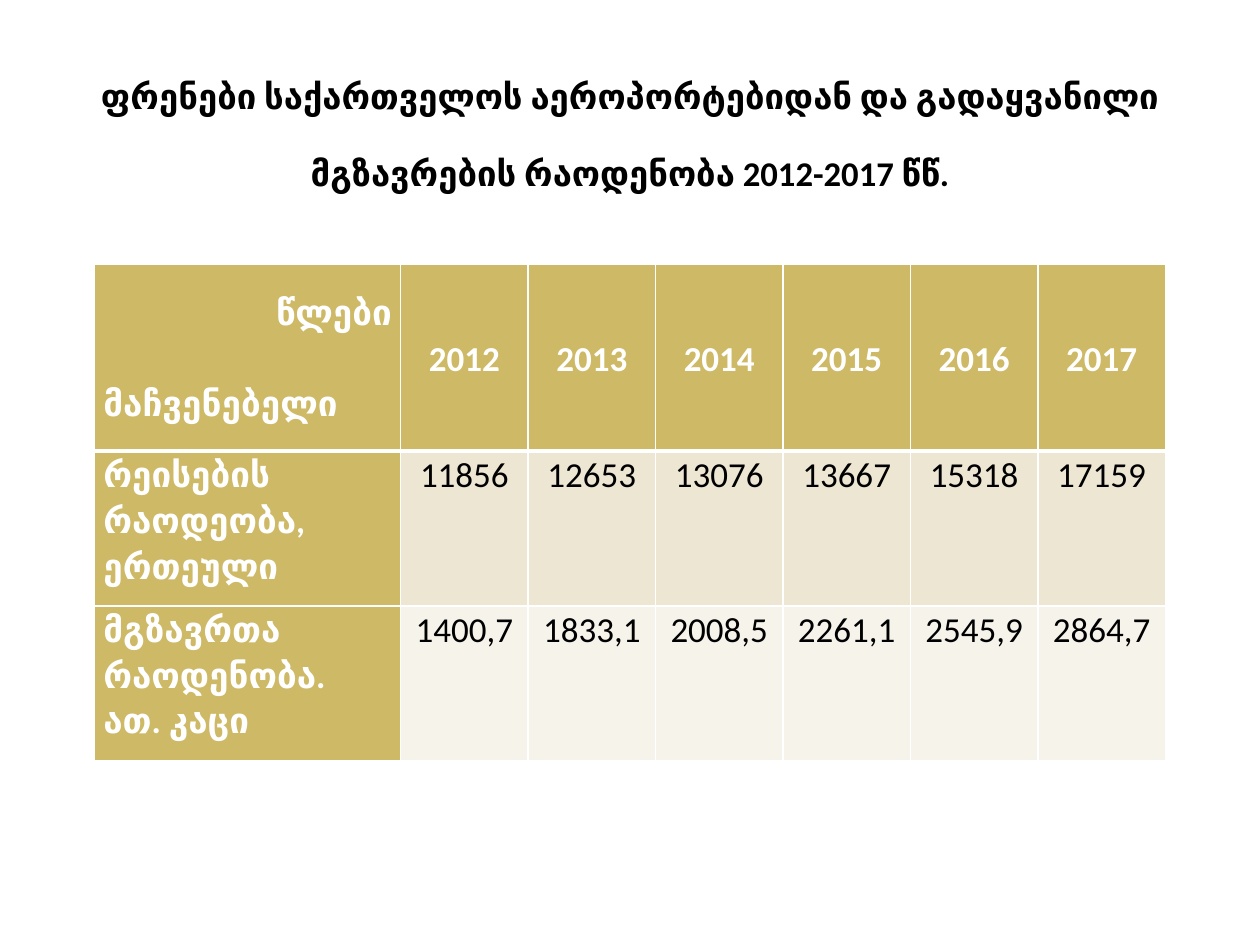
from lxml.etree import SubElement
from pptx import Presentation
from pptx.dml.color import RGBColor
from pptx.enum.text import MSO_ANCHOR as Anchor, PP_ALIGN as Align
from pptx.oxml import parse_xml
from pptx.oxml.ns import nsdecls, qn
from pptx.util import Pt

GOLD, SAND, CREAM = "CEB966", "EDE6D3", "F6F3EA"
WHITE, BLACK = "FFFFFF", "000000"

TITLE = ("ფრენები საქართველოს აეროპორტებიდან და გადაყვანილი "
         "მგზავრების რაოდენობა 2012-2017 წწ.")
YEARS = ["2012", "2013", "2014", "2015", "2016", "2017"]
ROWS = [
    ("რეისების რაოდეობა, ერთეული", SAND,
     ["11856", "12653", "13076", "13667", "15318", "17159"]),
    ("მგზავრთა რაოდენობა.\vათ. კაცი", CREAM,
     ["1400,7", "1833,1", "2008,5", "2261,1", "2545,9", "2864,7"]),
]


def rgb(value):
    return RGBColor.from_string(value)


class SlideBuilder:
    font = "Calibri"
    table_size = 20
    line_spacing = 1.07
    side_inset = 5.04

    def __init__(self, page):
        self.page = page

    def style(self, para, size, color, bold, align):
        para.alignment = align
        para.font.name = self.font
        para.font.size = Pt(size)
        para.font.bold = bold
        para.font.color.rgb = rgb(color)

    def title(self, text, left, top, width, height):
        box = self.page.shapes.add_textbox(Pt(left), Pt(top), Pt(width), Pt(height))
        frame = box.text_frame
        frame.word_wrap = True
        frame.vertical_anchor = Anchor.MIDDLE
        frame.text = text
        para = frame.paragraphs[0]
        para.line_spacing = Pt(44)
        self.style(para, 19.8, BLACK, True, Align.CENTER)

    def table(self, left, top, widths, heights):
        table = self.page.shapes.add_table(
            len(heights), len(widths), Pt(left), Pt(top),
            Pt(sum(widths)), Pt(sum(heights))).table
        for column, width in zip(table.columns, widths):
            column.width = Pt(width)
        for row, height in zip(table.rows, heights):
            row.height = Pt(height)
        return table

    def cell(self, cell, lines, fill, color, bold, aligns,
             anchor=Anchor.TOP, top_line=1, bottom_line=1):
        cell.margin_left = cell.margin_right = Pt(self.side_inset)
        cell.margin_top = cell.margin_bottom = 0
        cell.vertical_anchor = anchor
        self.borders(cell, top_line, bottom_line)
        cell.fill.solid()
        cell.fill.fore_color.rgb = rgb(fill)
        cell.text = "\n".join(lines)
        for para, align in zip(cell.text_frame.paragraphs, aligns):
            para.line_spacing = self.line_spacing
            self.style(para, self.table_size, color, bold, align)

    def borders(self, cell, top_line, bottom_line):
        """Add white edges; they must stand before the fill in the cell XML."""
        properties = cell._tc.get_or_add_tcPr()
        widths = {"lnL": 1, "lnR": 1, "lnT": top_line, "lnB": bottom_line}
        for index, (tag, width) in enumerate(widths.items()):
            line = parse_xml(f'<a:{tag} {nsdecls("a")} w="{Pt(width)}"/>')
            paint = SubElement(line, qn("a:solidFill"))
            SubElement(paint, qn("a:srgbClr"), val=WHITE)
            properties.insert(index, line)


def main():
    deck = Presentation()
    deck.slide_width, deck.slide_height = Pt(720), Pt(540)
    builder = SlideBuilder(deck.slides.add_slide(deck.slide_layouts[6]))

    builder.title(TITLE, 36, 21.6, 648, 90)

    table = builder.table(54, 151.2, [175] + [72.83] * len(YEARS),
                          [106.5] + [88.5] * len(ROWS))
    header = dict(fill=GOLD, color=WHITE, bold=True,
                  anchor=Anchor.MIDDLE, bottom_line=3)
    corner = table.cell(0, 0)
    builder.cell(corner, ["წლები", "მაჩვენებელი"],
                 aligns=[Align.RIGHT, Align.JUSTIFY], **header)
    corner.text_frame.paragraphs[1].space_before = Pt(26)
    for column, year in enumerate(YEARS, 1):
        builder.cell(table.cell(0, column), [year], aligns=[Align.CENTER], **header)

    for row, (label, fill, values) in enumerate(ROWS, 1):
        top_line = 3 if row == 1 else 1
        builder.cell(table.cell(row, 0), [label], GOLD, WHITE, True,
                     [Align.LEFT], top_line=top_line)
        for column, value in enumerate(values, 1):
            builder.cell(table.cell(row, column), [value], fill, BLACK, False,
                         [Align.CENTER], top_line=top_line)

    deck.save("out.pptx")


if __name__ == "__main__":
    main()
